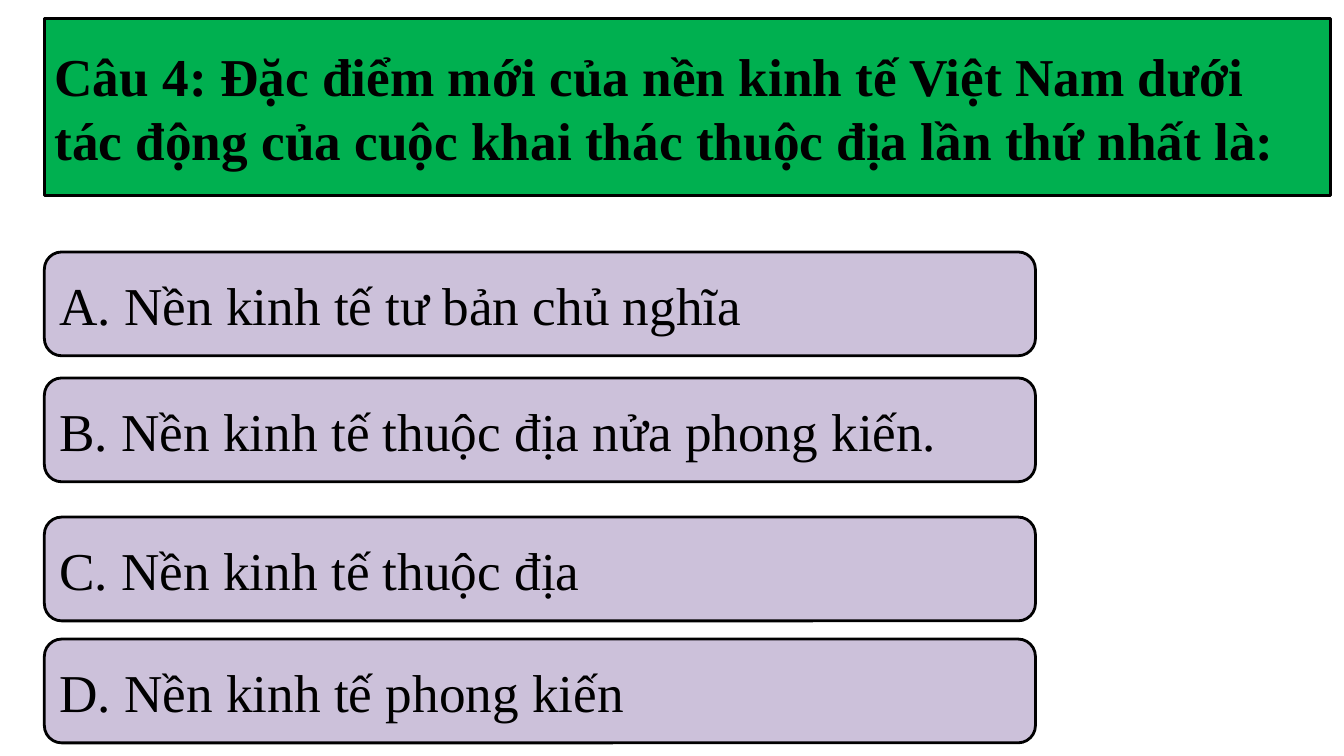
from lxml import etree
from pptx import Presentation
from pptx.dml.color import RGBColor
from pptx.enum.shapes import MSO_SHAPE
from pptx.enum.text import MSO_ANCHOR, MSO_AUTO_SIZE, PP_ALIGN
from pptx.oxml.ns import qn
from pptx.util import Pt

PX = 9144  # 100 px to the inch
ROUND = MSO_SHAPE.ROUNDED_RECTANGLE
MIDDLE = MSO_ANCHOR.MIDDLE
FIXED = MSO_AUTO_SIZE.NONE
LEFT, JUSTIFY = PP_ALIGN.LEFT, PP_ALIGN.JUSTIFY

BLACK = RGBColor(0x00, 0x00, 0x00)
GREEN = RGBColor(0x00, 0xB0, 0x50)
LILAC = RGBColor(0xCC, 0xC1, 0xDA)
FONT = "Times New Roman"

QUESTION = ("Câu 4: Đặc điểm mới của nền kinh tế Việt Nam dưới "
            "tác động của cuộc khai thác thuộc địa lần thứ nhất là:")
ANSWERS = [
    (250, "A. Nền kinh tế tư bản chủ nghĩa", LEFT),
    (375, "B. Nền kinh tế thuộc địa nửa phong kiến.", JUSTIFY),
    (513, "C. Nền kinh tế thuộc địa", JUSTIFY),
    (634, "D. Nền kinh tế phong kiến", JUSTIFY),
]


def paint(shape, color):
    shape.fill.solid()
    shape.fill.fore_color.rgb = color
    shape.line.color.rgb = BLACK
    shape.line.width = Pt(2)


def write(shape, text, align, bold):
    frame = shape.text_frame
    frame.word_wrap = True
    frame.auto_size = FIXED
    frame.vertical_anchor = MIDDLE
    par = frame.paragraphs[0]
    par.alignment = align
    run = par.add_run()
    run.text = text
    font = run.font
    font.name, font.size, font.bold = FONT, Pt(38), bold
    font.color.rgb = BLACK


def add_question(slide, x, y, w, h):
    """Turn the title placeholder into a rounded green panel."""
    title = slide.shapes.title
    title.left, title.top = x * PX, y * PX
    title.width, title.height = w * PX, h * PX
    geom = etree.SubElement(title.element.spPr, qn("a:prstGeom"), prst="roundRect")
    etree.SubElement(geom, qn("a:avLst"))
    paint(title, GREEN)
    write(title, QUESTION, LEFT, True)


def add_answer(slide, x, y, w, h, text, align):
    box = slide.shapes.add_shape(ROUND, x * PX, y * PX, w * PX, h * PX)
    box.shadow.inherit = False
    paint(box, LILAC)
    write(box, text, align, False)


def main():
    deck = Presentation()
    deck.slide_width, deck.slide_height = 1333 * PX, 750 * PX
    slide = deck.slides.add_slide(deck.slide_layouts.get_by_name("Title Only"))
    add_question(slide, 44, 18, 1276, 176)
    for top, text, align in ANSWERS:
        add_answer(slide, 44, top, 983, 103, text, align)
    deck.save("out.pptx")


if __name__ == "__main__":
    main()
